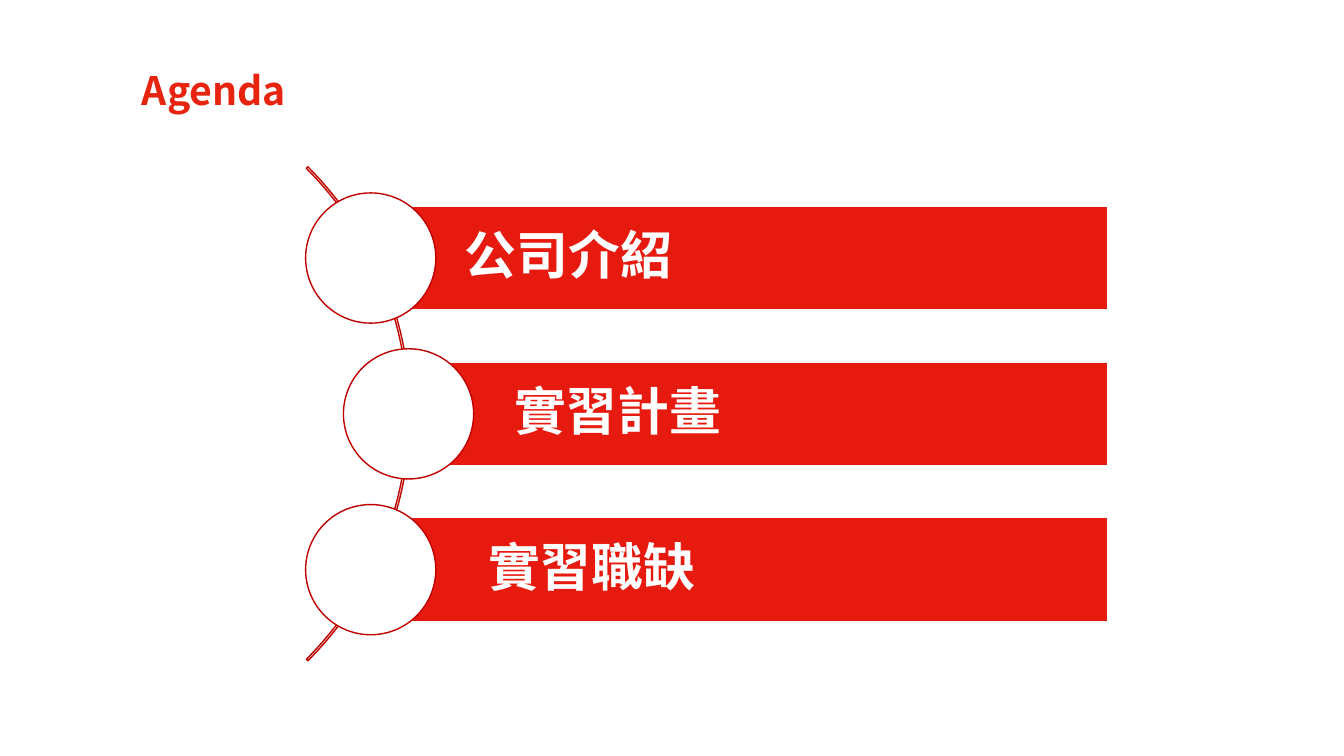
"""Build the agenda slide: three red topic bars strung along an arc."""
from dataclasses import dataclass

from lxml.etree import SubElement
from pptx import Presentation
from pptx.dml.color import RGBColor
from pptx.enum.shapes import MSO_SHAPE as Shape
from pptx.enum.text import MSO_ANCHOR as Anchor, PP_ALIGN as Align
from pptx.oxml.ns import qn
from pptx.util import Pt


@dataclass(frozen=True)
class Theme:
    heading: RGBColor = RGBColor.from_string("E62410")
    bar: RGBColor = RGBColor.from_string("E71A0F")
    outline: RGBColor = RGBColor.from_string("C00000")
    white: RGBColor = RGBColor.from_string("FFFFFF")
    heading_font: str = "Noto Sans CJK TC"
    topic_font: str = "Noto Sans CJK SC"
    heading_size: int = 28
    topic_size: int = 37


theme = Theme()
deck = Presentation()
deck.slide_width, deck.slide_height = Pt(960), Pt(540)
slide = deck.slides.add_slide(deck.slide_layouts[6])


def add_outlined(kind, left, top, width, height, fill, line):
    shape = slide.shapes.add_shape(kind, Pt(left), Pt(top), Pt(width), Pt(height))
    shape.shadow.inherit = False
    if fill is None:
        shape.fill.background()
    else:
        shape.fill.solid()
        shape.fill.fore_color.rgb = fill
    shape.line.color.rgb = line
    shape.line.width = Pt(1)
    return shape


def write(frame, words, font_name, size, color):
    frame.word_wrap = True
    frame.vertical_anchor = Anchor.MIDDLE
    paragraph = frame.paragraphs[0]
    paragraph.alignment = Align.LEFT
    paragraph.line_spacing = 0.9
    run = paragraph.add_run()
    run.text = words
    run.font.size = Pt(size)
    run.font.bold = True
    run.font.color.rgb = color
    run.font.name = font_name
    SubElement(run.font._element, qn("a:ea"), typeface=font_name)


heading = slide.shapes.add_textbox(Pt(94.3), Pt(49), Pt(358), Pt(34.5))
write(heading.text_frame, "Agenda", theme.heading_font, theme.heading_size, theme.heading)

middle_y, pitch = 295.6, 111.3
arc_size, arc_thickness = 499, 1.56
arc = add_outlined(Shape.BLOCK_ARC, -206, middle_y - arc_size / 2,
                   arc_size, arc_size, None, theme.outline)
arc.adjustments[0] = 189
arc.adjustments[1] = 27
arc.adjustments[2] = arc_thickness / arc_size

bar_right, bar_height, circle_size = 791.2, 74.2, 93
text_inset, indent_step = 59, 8.3
topics = [("公司介紹", 264.8), ("實習計畫", 291.8), ("實習職缺", 264.8)]

for index, (topic, bar_left) in enumerate(topics):
    center_y = middle_y + (index - 1) * pitch
    bar = add_outlined(Shape.RECTANGLE, bar_left, center_y - bar_height / 2,
                       bar_right - bar_left, bar_height, theme.bar, theme.white)
    label = bar.text_frame
    label.margin_left = Pt(text_inset + (index + 1) * indent_step)
    label.margin_top = label.margin_right = label.margin_bottom = Pt(7.2)
    write(label, topic, theme.topic_font, theme.topic_size, theme.white)
    add_outlined(Shape.OVAL, bar_left - circle_size / 2, center_y - circle_size / 2,
                 circle_size, circle_size, theme.white, theme.outline)

deck.save("out.pptx")
